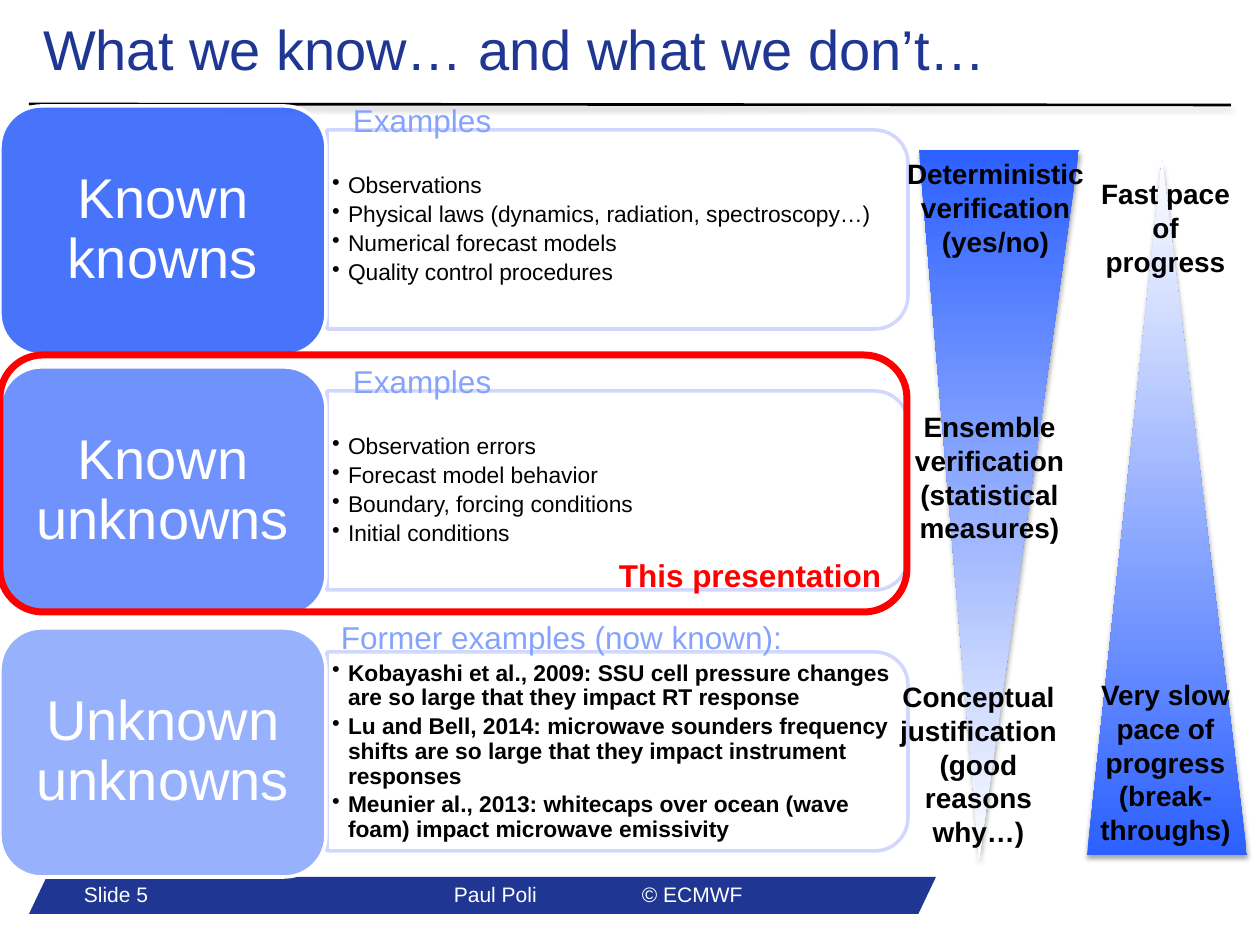
import pptx
import pptx.util
import pptx.dml.color
import pptx.enum.shapes
import pptx.enum.text
import pptx.oxml
import pptx.oxml.ns

PX = 914400 / 126
FONT = "Arial"
NAVY, BLUE, PALE, WHITE, BLACK, RED = "1F3692", "3365FB", "CED3FD", "FFFFFF", "000000", "FF0000"
SHAPES = pptx.enum.shapes.MSO_SHAPE
ALIGN = pptx.enum.text.PP_ALIGN
ANCHOR = pptx.enum.text.MSO_ANCHOR
TEXT_INSETS = (13, 6, 13, 6)

ROWS = [
    ("Known knowns", 90, "Examples", (340, -11), False,
     ["Observations", "Physical laws (dynamics, radiation, spectroscopy…)",
      "Numerical forecast models", "Quality control procedures"]),
    ("Known unknowns", 70, "Examples", (340, -11), False,
     ["Observation errors", "Forecast model behavior",
      "Boundary, forcing conditions", "Initial conditions"]),
    ("Unknown unknowns", 50, "Former examples (now known):", (328, -16), True,
     ["Kobayashi et al., 2009: SSU cell pressure changes are so large that they impact RT response",
      "Lu and Bell, 2014: microwave sounders frequency shifts are so large that they impact "
      "instrument responses",
      "Meunier al., 2013: whitecaps over ocean (wave foam) impact microwave emissivity"]),
]


def emu(px):
    return round(px * PX)


def colour(value):
    return pptx.dml.color.RGBColor.from_string(value)


def element(tag, **attributes):
    node = pptx.oxml.parse_xml(f'<a:{tag} {pptx.oxml.ns.nsdecls("a")}/>')
    for name, value in attributes.items():
        node.set(name, str(value))
    return node


def set_opacity(shape, percent):
    for node in shape._element.spPr.iter(pptx.oxml.ns.qn("a:srgbClr")):
        if node.get("val") != WHITE:
            node.append(element("alpha", val=percent * 1000))


def set_shadow(shape, shade, percent, blur, distance):
    properties = shape._element.spPr
    effects = properties.find(pptx.oxml.ns.qn("a:effectLst"))
    if effects is None:
        effects = element("effectLst")
        properties.append(effects)
    outer = element("outerShdw", blurRad=pptx.util.Pt(blur), dist=pptx.util.Pt(distance),
                    dir=5400000, rotWithShape=0)
    tint = element("srgbClr", val=shade)
    tint.append(element("alpha", val=percent * 1000))
    outer.append(tint)
    effects.append(outer)


def add_box(page, kind, left, top, width, height, fill=None, line=None, weight=2):
    box = page.shapes.add_shape(kind, emu(left), emu(top), emu(width), emu(height))
    box.shadow.inherit = False
    if fill:
        box.fill.solid()
        box.fill.fore_color.rgb = colour(fill)
    else:
        box.fill.background()
    if line:
        box.line.color.rgb = colour(line)
        box.line.width = pptx.util.Pt(weight)
    else:
        box.line.fill.background()
    return box


def add_text_box(page, left, top, width, height):
    return page.shapes.add_textbox(emu(left), emu(top), emu(width), emu(height))


def write(box, *lines, size, shade=BLACK, bold=False, align=ALIGN.LEFT, anchor=ANCHOR.TOP,
          insets=TEXT_INSETS, wrap=True, spacing=1.0, after=0, bullet=False, tabs=()):
    frame = box.text_frame
    frame.word_wrap = wrap
    frame.vertical_anchor = anchor
    (frame.margin_left, frame.margin_top,
     frame.margin_right, frame.margin_bottom) = map(emu, insets)
    for number, line in enumerate(lines):
        para = frame.paragraphs[0] if number == 0 else frame.add_paragraph()
        para.alignment = align
        para.line_spacing = spacing
        para.space_after = pptx.util.Pt(after)
        properties = para._p.get_or_add_pPr()
        if bullet:
            properties.set("marL", str(emu(16)))
            properties.set("indent", str(-emu(16)))
            properties.append(element("buChar", char="•"))
        if tabs:
            stops = element("tabLst")
            for stop in tabs:
                stops.append(element("tab", pos=emu(stop), algn="l"))
            properties.append(stops)
        span = para.add_run()
        span.text = line
        span.font.name = FONT
        span.font.size = pptx.util.Pt(size)
        span.font.bold = bold
        span.font.color.rgb = colour(shade)


def add_footer(page, left, top):
    band = add_box(page, SHAPES.PARALLELOGRAM, left, top, 907, 37, fill=NAVY)
    band.adjustments[0] = 0.476
    write(add_text_box(page, left + 42, top - 1, 706, 38), "Slide 5\tPaul Poli\t© ECMWF",
          size=12, shade=WHITE, tabs=(370, 558))


def add_title(page, left, top):
    rule = page.shapes.add_connector(pptx.enum.shapes.MSO_CONNECTOR.STRAIGHT,
                                     emu(left), emu(top + 96), emu(left + 1202), emu(top + 97))
    rule.line.color.rgb = colour(BLACK)
    rule.line.width = pptx.util.Pt(1.5)
    set_shadow(rule, "808080", 38, 3.1, 1.6)
    write(add_text_box(page, left + 14, top, 1179, 89), "What we know… and what we don’t…",
          size=32, shade=NAVY, anchor=ANCHOR.MIDDLE, insets=(0, 0, 0, 0), spacing=0.9)


def add_row(page, left, top, name, opacity, heading, offset, bold, items):
    # Example panel: a shape standing upright, turned to lie on its side
    width, height = 581, 199
    shift = (width - height) / 2
    panel = add_box(page, SHAPES.ROUND_2_SAME_RECTANGLE, left + 327 + shift, top + 24 - shift,
                    height, width, line=PALE)
    panel.rotation = 90
    set_opacity(panel, 90)
    write(add_text_box(page, left + 326, top + 34, 571, 180), *items, size=13, bold=bold,
          anchor=ANCHOR.MIDDLE, insets=(6, 4, 6, 4), spacing=0.9, after=2.5, bullet=True)
    # Category tile
    tile = add_box(page, SHAPES.ROUNDED_RECTANGLE, left, top, 326, 249, fill=BLUE, line=WHITE)
    set_opacity(tile, opacity)
    write(tile, name, size=32, shade=WHITE, align=ALIGN.CENTER, anchor=ANCHOR.MIDDLE,
          insets=(16, 9, 16, 9), spacing=0.9)
    # Panel heading
    write(add_text_box(page, left + offset[0], top + offset[1], 470, 50), heading,
          size=18, shade="85A3FD", wrap=False)


def add_wedge(page, left, base, tip_x, tip_y, angle, labels):
    builder = page.shapes.build_freeform(left, base, scale=PX)
    builder.add_line_segments([(left + tip_x, tip_y), (left + 160, base)], close=True)
    wedge = builder.convert_to_shape()
    wedge.shadow.inherit = False
    wedge.line.fill.background()
    wedge.fill.gradient()
    wedge.fill.gradient_angle = angle
    for stop, shade, position in zip(wedge.fill.gradient_stops, ("2C60FF", WHITE), (0, 1)):
        stop.color.rgb = colour(shade)
        stop.position = position
    set_shadow(wedge, BLACK, 35, 3.1, 1.8)
    for text, x, y, width, height in labels:
        write(add_text_box(page, left + x, y, width, height), text,
              size=16, bold=True, align=ALIGN.CENTER)


def add_highlight(page, left, top):
    outline = add_box(page, SHAPES.ROUNDED_RECTANGLE, left, top, 907, 257, line=RED, weight=4)
    write(outline, "This presentation", size=18, shade=RED, bold=True,
          align=ALIGN.RIGHT, anchor=ANCHOR.BOTTOM)


def main():
    deck = pptx.Presentation()
    deck.slide_width, deck.slide_height = emu(1260), emu(945)
    page = deck.slides.add_slide(deck.slide_layouts[6])
    add_footer(page, 29, 877)
    add_title(page, 29, 8)
    for number, row in enumerate(ROWS):
        add_row(page, 0, 106 + 261 * number, *row)
    # Pace of progress widens downwards, verification narrows
    add_wedge(page, 1087, 855, 75, 160, 90, [
        ("Fast pace of progress", -11, 171, 179, 115),
        ("Very slow pace of progress (break-throughs)", -29, 672, 215, 183)])
    add_wedge(page, 919, 150, 60, 860, 270, [
        ("Deterministic verification (yes/no)", -31, 151, 215, 115),
        ("Ensemble verification (statistical measures)", -37, 404, 215, 149),
        ("Conceptual justification (good reasons why…)", -48, 674, 215, 183)])
    add_highlight(page, 0, 355)
    deck.save("out.pptx")


if __name__ == "__main__":
    main()
